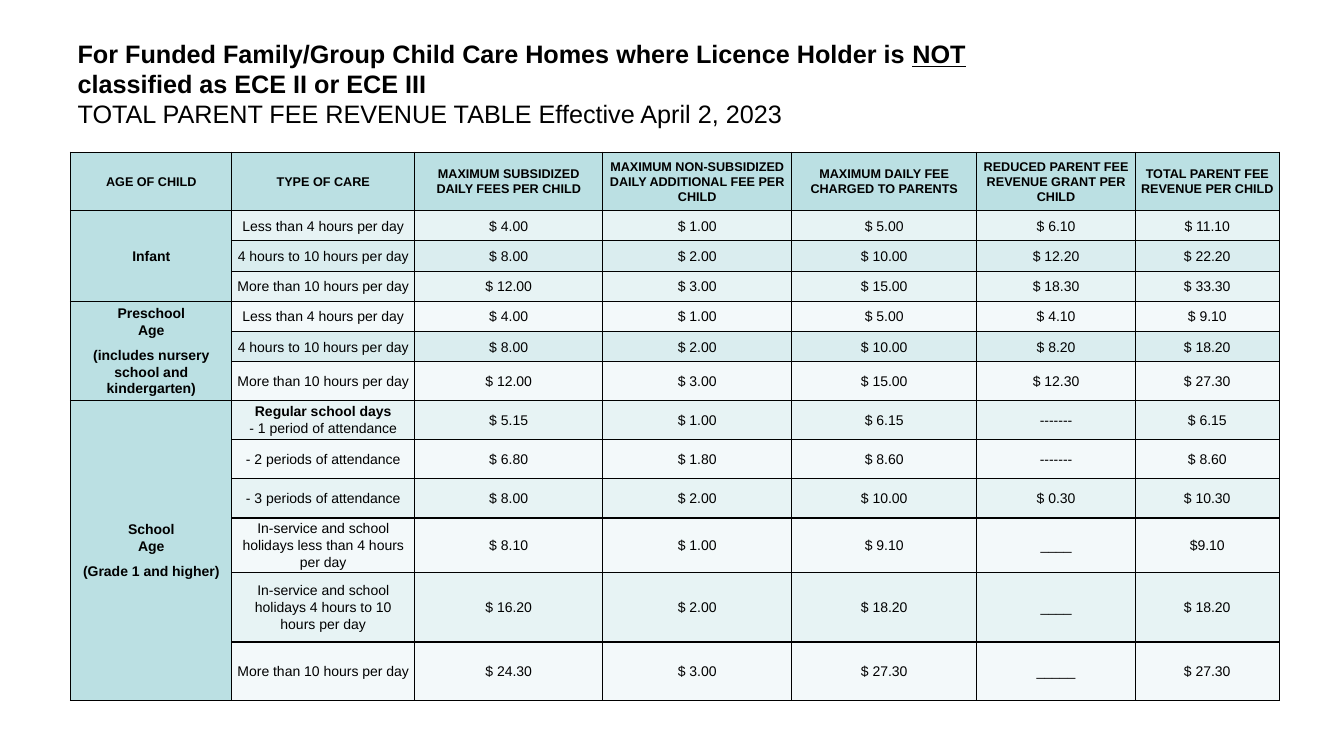
from lxml import etree
from pptx import Presentation
from pptx.dml.color import RGBColor
from pptx.enum.text import MSO_ANCHOR, MSO_AUTO_SIZE, PP_ALIGN
from pptx.oxml.ns import qn
from pptx.util import Inches, Pt

MIDDLE = MSO_ANCHOR.MIDDLE
LEFT, CENTER = PP_ALIGN.LEFT, PP_ALIGN.CENTER
NO_FIT = MSO_AUTO_SIZE.NONE
FONT, INK, HEAD = "Arial", "000000", "BBE0E3"
LIGHT, MID, PALE = "E7F3F4", "DAEDEF", "F3F9FA"

COLS = [1.6, 1.81, 1.87, 1.87, 1.84, 1.57, 1.43]
ROWS = [0.58] + [0.3] * 5 + [0.38] + [0.39] * 3 + [0.54, 0.69, 0.58]
TITLE = [
    [("For Funded Family/Group Child Care Homes where Licence Holder is ", True, False),
     ("NOT", True, True),
     (" classified as ECE II or ECE III", True, False)],
    [("TOTAL PARENT FEE REVENUE TABLE Effective April 2, 2023", False, False)],
]
HEADS = [
    "AGE OF CHILD", "TYPE OF CARE", "MAXIMUM SUBSIDIZED DAILY FEES PER CHILD",
    "MAXIMUM NON-SUBSIDIZED DAILY ADDITIONAL FEE PER CHILD",
    "MAXIMUM DAILY FEE CHARGED TO PARENTS",
    "REDUCED PARENT FEE REVENUE GRANT PER CHILD",
    "TOTAL PARENT FEE REVENUE PER CHILD",
]
SHORT, DAY, LONG = ("Less than 4 hours per day", "4 hours to 10 hours per day",
                    "More than 10 hours per day")
AGES = [
    (1, 3, ["Infant"]),
    (4, 6, ["Preschool", "Age", "(includes nursery school and kindergarten)"]),
    (7, 12, ["School", "Age", "(Grade 1 and higher)"]),
]
FEES = [
    (LIGHT, SHORT, "$ 4.00", "$ 1.00", "$ 5.00", "$ 6.10", "$ 11.10"),
    (MID, DAY, "$ 8.00", "$ 2.00", "$ 10.00", "$ 12.20", "$ 22.20"),
    (LIGHT, LONG, "$ 12.00", "$ 3.00", "$ 15.00", "$ 18.30", "$ 33.30"),
    (PALE, SHORT, "$ 4.00", "$ 1.00", "$ 5.00", "$ 4.10", "$ 9.10"),
    (MID, DAY, "$ 8.00", "$ 2.00", "$ 10.00", "$ 8.20", "$ 18.20"),
    (PALE, LONG, "$ 12.00", "$ 3.00", "$ 15.00", "$ 12.30", "$ 27.30"),
    (LIGHT, "- 1 period of attendance", "$ 5.15", "$ 1.00", "$ 6.15", "-------", "$ 6.15"),
    (PALE, "- 2 periods of attendance", "$ 6.80", "$ 1.80", "$ 8.60", "-------", "$ 8.60"),
    (LIGHT, "- 3 periods of attendance", "$ 8.00", "$ 2.00", "$ 10.00", "$ 0.30", "$ 10.30"),
    (PALE, "In-service and school holidays less than 4 hours per day",
     "$ 8.10", "$ 1.00", "$ 9.10", "____", "$9.10"),
    (LIGHT, "In-service and school holidays 4 hours to 10 hours per day",
     "$ 16.20", "$ 2.00", "$ 18.20", "____", "$ 18.20"),
    (PALE, LONG, "$ 24.30", "$ 3.00", "$ 27.30", "_____", "$ 27.30"),
]


def paint(hue):
    """Turn a hex string into a colour."""
    return RGBColor.from_string(hue)


def add_run(para, text, size, bold=False, under=False):
    """Add one formatted run to a paragraph."""
    run = para.add_run()
    run.text = text
    font = run.font
    font.name, font.size, font.bold = FONT, Pt(size), bold
    font.underline = under
    font.color.rgb = paint(INK)


def add_para(frame, index, align, space=1.0):
    """Return the paragraph at an index, adding it after the first."""
    para = frame.add_paragraph() if index else frame.paragraphs[0]
    para.alignment, para.line_spacing = align, space
    para.space_before = para.space_after = Pt(0)
    return para


def edge(cell):
    """Draw thin borders on all four sides of a cell."""
    props = cell._tc.get_or_add_tcPr()
    for spot, side in enumerate(("lnL", "lnR", "lnT", "lnB")):
        line = etree.Element(qn("a:" + side), w=str(Pt(1)))
        fill = etree.SubElement(line, qn("a:solidFill"))
        etree.SubElement(fill, qn("a:srgbClr"), val=INK)
        props.insert(spot, line)


def style(cell, hue):
    """Set the fill, borders, margins and anchor of a cell."""
    cell.fill.solid()
    cell.fill.fore_color.rgb = paint(hue)
    cell.vertical_anchor = MIDDLE
    cell.margin_left = cell.margin_right = Inches(0.05)
    cell.margin_top = cell.margin_bottom = 0
    edge(cell)


def write(cell, lines, size=10, bold=False):
    """Write centred lines into a cell."""
    for index, text in enumerate(lines):
        para = add_para(cell.text_frame, index, CENTER, 1.07)
        add_run(para, text, size, bold)


def add_title(slide):
    """Place and fill the title placeholder."""
    title = slide.shapes.title
    title.left, title.top = Inches(0.67), Inches(0.34)
    title.width, title.height = Inches(9.51), Inches(0.98)
    frame = title.text_frame
    frame.word_wrap, frame.auto_size = True, NO_FIT
    frame.vertical_anchor = MIDDLE
    for index, runs in enumerate(TITLE):
        para = add_para(frame, index, LEFT)
        for text, bold, under in runs:
            add_run(para, text, 18, bold, under)


def add_fees(slide):
    """Build the fee table."""
    table = slide.shapes.add_table(
        len(ROWS), len(COLS), Inches(0.7), Inches(1.51),
        Inches(sum(COLS)), Inches(sum(ROWS))).table
    for col, width in zip(table.columns, COLS):
        col.width = Inches(width)
    for row, height in zip(table.rows, ROWS):
        row.height = Inches(height)
    for col, text in enumerate(HEADS):
        style(table.cell(0, col), HEAD)
        write(table.cell(0, col), [text], 9, True)
    for row, (hue, *texts) in enumerate(FEES, 1):
        style(table.cell(row, 0), HEAD)
        for col, text in enumerate(texts, 1):
            style(table.cell(row, col), hue)
            write(table.cell(row, col), [text])
    for first, last, lines in AGES:
        cell = table.cell(first, 0)
        cell.merge(table.cell(last, 0))
        write(cell, lines, bold=True)
        if len(lines) > 1:
            cell.text_frame.paragraphs[1].space_after = Pt(6)
    care = table.cell(7, 1)
    care.text_frame.clear()
    para = add_para(care.text_frame, 0, CENTER, 1.07)
    add_run(para, "Regular school days", 10, True)
    para.add_line_break()
    add_run(para, FEES[6][1], 10)


def main():
    """Build and save the slide."""
    deck = Presentation()
    deck.slide_width, deck.slide_height = Inches(13.33), Inches(7.5)
    slide = deck.slides.add_slide(deck.slide_layouts[5])
    add_title(slide)
    add_fees(slide)
    deck.save("out.pptx")


if __name__ == "__main__":
    main()
